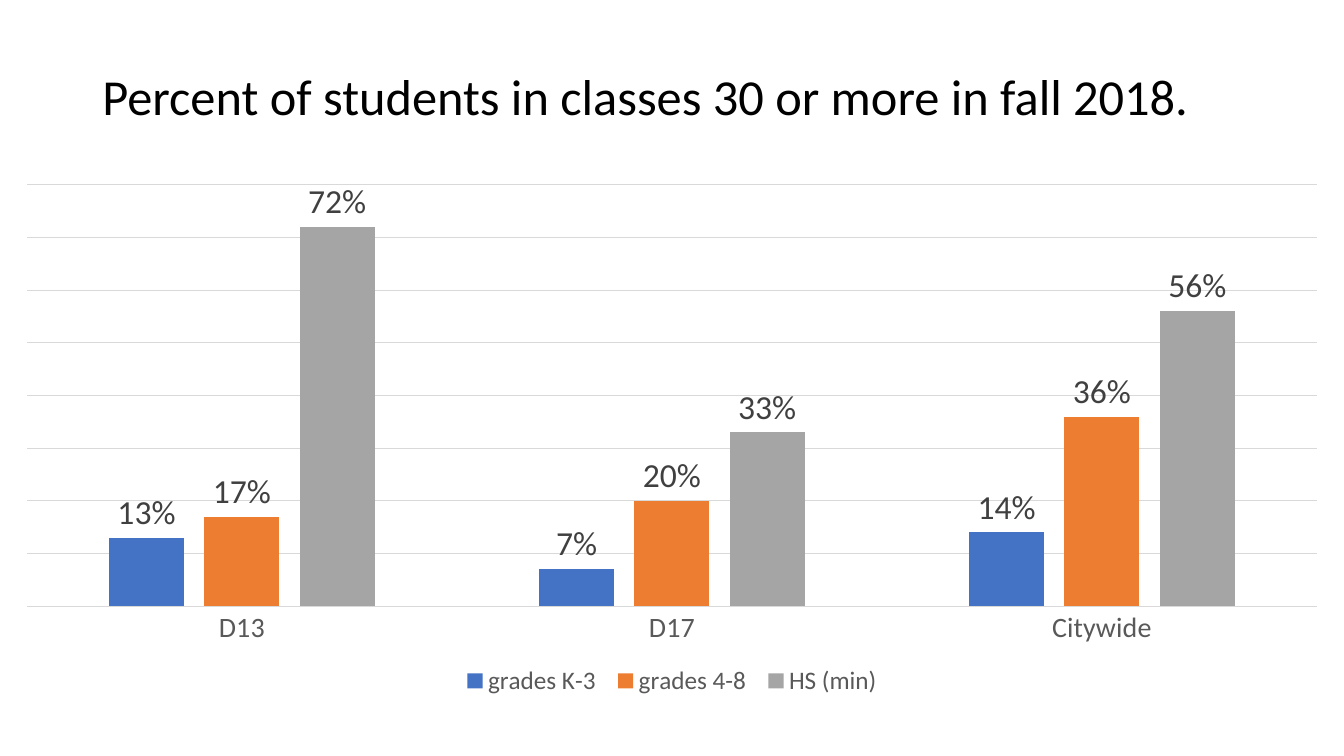
"""Build a slide charting the share of students in large classes."""
from dataclasses import dataclass
from typing import Any

import lxml.etree
import pptx
import pptx.chart.data
import pptx.dml.color
import pptx.enum.chart
import pptx.enum.text
import pptx.oxml
import pptx.oxml.ns
import pptx.util
from pptx.util import Cm

COLORS = {
    "title": "000000",
    "label": "404040",
    "axis": "595959",
    "grid": "D9D9D9",
    "blue": "4472C4",
    "orange": "ED7D31",
    "gray": "A5A5A5",
}
DISTRICTS = ["D13", "D17", "Citywide"]
PLOT_LAYOUT = {"x": 0.02, "y": 0.02, "w": 0.96, "h": 0.8}


@dataclass(frozen=True)
class GradeBand:
    name: str
    shares: tuple[float, ...]
    color: str


GRADE_BANDS = [
    GradeBand("grades K-3 ", (0.13, 0.07, 0.14), "blue"),
    GradeBand("grades 4-8 ", (0.17, 0.20, 0.36), "orange"),
    GradeBand("HS (min)", (0.72, 0.33, 0.56), "gray"),
]


def color_of(name: str) -> pptx.dml.color.RGBColor:
    return pptx.dml.color.RGBColor.from_string(COLORS[name])


def set_values(target: Any, values: dict[str, Any]) -> None:
    for name, value in values.items():
        setattr(target, name, value)


def style_font(font: Any, points: int, color: str) -> None:
    set_values(font, {"name": "Calibri", "size": pptx.util.Pt(points), "bold": False})
    font.color.rgb = color_of(color)


def style_line(line: Any) -> None:
    line.width = pptx.util.Pt(0.75)
    line.color.rgb = color_of("grid")


def add_title(page: Any, text: str) -> None:
    box = page.shapes.add_textbox(Cm(2.33), Cm(1.35), Cm(29.21), Cm(3.68))
    set_values(box.text_frame, {
        "word_wrap": True,
        "vertical_anchor": pptx.enum.text.MSO_ANCHOR.MIDDLE,
        "margin_bottom": Cm(1.52),
    })
    para = box.text_frame.paragraphs[0]
    para.line_spacing = 0.9
    span = para.add_run()
    span.text = text
    style_font(span.font, 36, "title")


def place_plot(chart: Any) -> None:
    qn = pptx.oxml.ns.qn
    plot_area = chart.element.find(".//" + qn("c:plotArea"))
    for old_layout in plot_area.findall(qn("c:layout")):
        plot_area.remove(old_layout)
    layout = lxml.etree.Element(qn("c:layout"))
    manual = lxml.etree.SubElement(layout, qn("c:manualLayout"))
    settings = {"layoutTarget": "inner", "xMode": "edge", "yMode": "edge", **PLOT_LAYOUT}
    for tag, value in settings.items():
        lxml.etree.SubElement(manual, qn(f"c:{tag}")).set("val", str(value))
    plot_area.insert(0, layout)


def style_axes(chart: Any) -> None:
    no_tick = pptx.enum.chart.XL_TICK_MARK.NONE
    districts = chart.category_axis
    set_values(districts, {"major_tick_mark": no_tick, "minor_tick_mark": no_tick})
    style_font(districts.tick_labels.font, 20, "axis")
    style_line(districts.format.line)
    shares = chart.value_axis
    set_values(shares, {
        "minimum_scale": 0,
        "maximum_scale": 0.8,
        "major_unit": 0.1,
        "has_major_gridlines": True,
        "visible": False,
    })
    set_values(shares.tick_labels, {"number_format": "0%", "number_format_is_linked": False})
    style_line(shares.major_gridlines.format.line)


def style_series(series: Any, band: GradeBand) -> None:
    series.invert_if_negative = False
    series.format.fill.solid()
    series.format.fill.fore_color.rgb = color_of(band.color)
    labels = series.data_labels
    set_values(labels, {
        "show_value": True,
        "number_format": "0%",
        "number_format_is_linked": False,
        "position": pptx.enum.chart.XL_LABEL_POSITION.OUTSIDE_END,
    })
    style_font(labels.font, 24, "label")


def add_share_chart(page: Any) -> None:
    data = pptx.chart.data.CategoryChartData(number_format="0%")
    data.categories = DISTRICTS
    for band in GRADE_BANDS:
        data.add_series(band.name, band.shares)
    chart = page.shapes.add_chart(
        pptx.enum.chart.XL_CHART_TYPE.COLUMN_CLUSTERED,
        Cm(0), Cm(4.39), Cm(33.87), Cm(13.28), data,
    ).chart
    set_values(chart, {"has_title": False, "has_legend": True})
    style_font(chart.font, 10, "title")
    set_values(chart.legend, {
        "position": pptx.enum.chart.XL_LEGEND_POSITION.BOTTOM,
        "include_in_layout": False,
    })
    style_font(chart.legend.font, 18, "axis")
    plot = chart.plots[0]
    set_values(plot, {"gap_width": 219, "overlap": -27, "vary_by_categories": False})
    for series, band in zip(plot.series, GRADE_BANDS):
        style_series(series, band)
    style_axes(chart)
    place_plot(chart)


def main() -> None:
    deck = pptx.Presentation()
    set_values(deck, {"slide_width": Cm(33.87), "slide_height": Cm(19.05)})
    page = deck.slides.add_slide(deck.slide_layouts[6])
    add_title(page, "Percent of students in classes 30 or more in fall 2018.")
    add_share_chart(page)
    deck.save("out.pptx")


if __name__ == "__main__":
    main()
